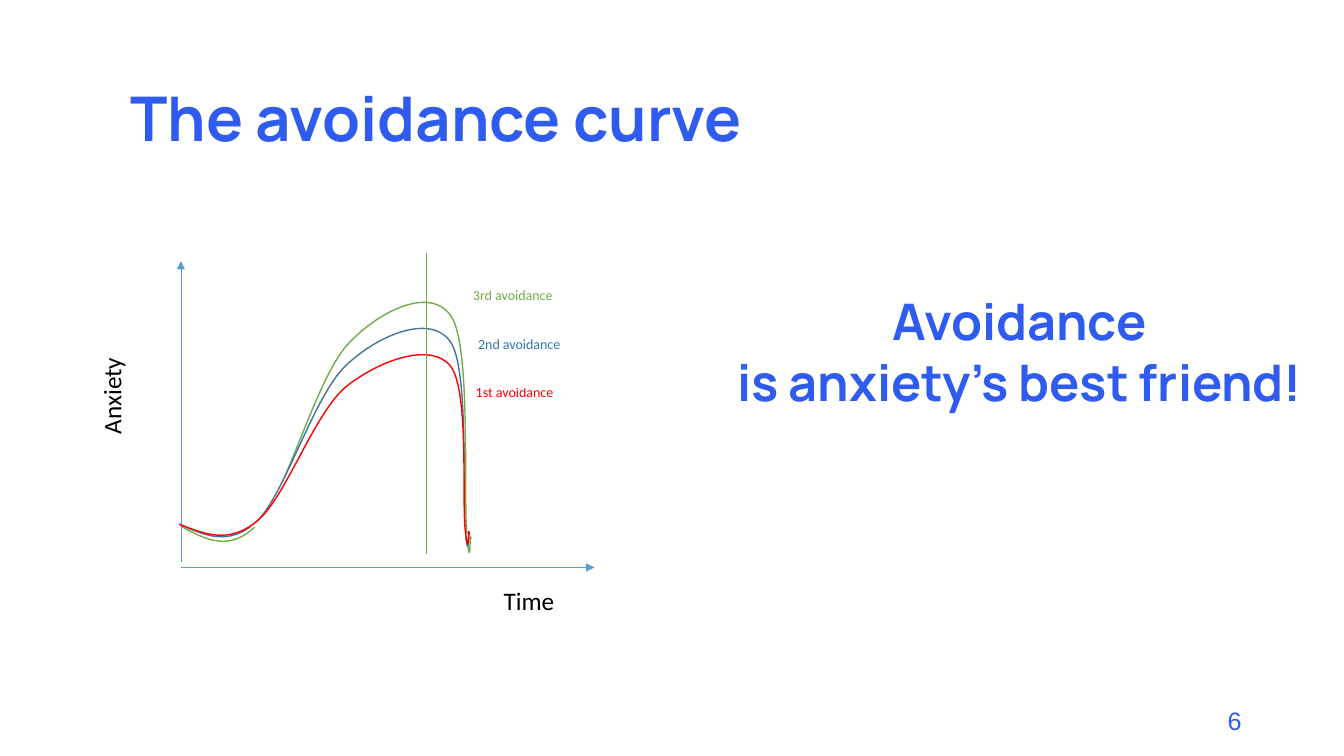
from pptx import Presentation
from pptx import util as u
from pptx.dml.color import RGBColor
from pptx.enum import shapes, text
from pptx.oxml.ns import qn
from lxml import etree

ACCENT, GREEN, BLUE, RED = "2F5CEE", "70AD47", "43739E", "FF0000"
AXIS, WHITE, BLACK = "5B9BD5", "FFFFFF", "000000"

# Bezier points in cm: a start, then three points for each segment
XS = [4.52, 5.16, 5.77, 6.48, 7.19, 7.92, 8.74, 9.55, 10.85, 11.35,
      11.84, 11.63, 11.73, 11.81, 11.81, 11.81, 11.84, 11.84, 11.81]
THIRD = [13.26, 13.61, 13.94, 13.18, 12.42, 9.53, 8.66, 7.8, 7.19, 8.0,
         8.81, 12.6, 13.51, 14.45, 13.51, 13.51, 13.54, 13.56, 13.61]
SECOND = [13.21, 13.49, 13.79, 13.13, 12.45, 9.93, 9.19, 8.43, 7.9, 8.61,
          9.32, 12.62, 13.41, 14.22, 13.41, 13.41, 13.44, 13.46, 13.49]
FIRST = [13.21, 13.46, 13.72, 13.13, 12.57, 10.39, 9.73, 9.09, 8.61, 9.22,
         9.83, 12.7, 13.39, 14.1, 13.39, 13.39, 13.41, 13.44, 13.46]


def rgb(code):
    return RGBColor.from_string(code)


def style(frame, size, font, color, align, bold=False):
    frame.word_wrap = True
    for para in frame.paragraphs:
        para.alignment = align
        for run in para.runs:
            run.font.size = u.Pt(size)
            run.font.name = font
            run.font.bold = bold
            run.font.color.rgb = rgb(color)


def place(shape, box):
    shape.left, shape.top, shape.width, shape.height = map(u.Cm, box)


def label(slide, words, box, size, color, font="Calibri",
          align=text.PP_ALIGN.LEFT, bold=False, fill=None, turn=0):
    shape = slide.shapes.add_textbox(*map(u.Cm, box))
    shape.rotation = turn
    if fill:
        shape.fill.solid()
        shape.fill.fore_color.rgb = rgb(fill)
    shape.text_frame.text = words
    style(shape.text_frame, size, font, color, align, bold)


def line(slide, start, end, color, arrow=False):
    link = slide.shapes.add_connector(
        shapes.MSO_CONNECTOR.STRAIGHT, *map(u.Cm, start + end))
    link.line.color.rgb = rgb(color)
    link.line.width = u.Pt(0.5)
    if arrow:
        etree.SubElement(link.line._get_or_add_ln(), qn("a:tailEnd"),
                         type="triangle")
    etree.SubElement(link._element.spPr, qn("a:effectLst"))


def curve(slide, ys, color, top, high, shift=0):
    left, wide = XS[0] + shift, 7.32
    dots = [(u.Cm(x + shift - left), u.Cm(y - top)) for x, y in zip(XS, ys)]
    pen = slide.shapes.build_freeform(*dots[0])
    pen.add_line_segments(dots[1:], close=False)
    shape = pen.convert_to_shape()
    place(shape, (left, top, wide, high))

    # Turn the straight segments into Bezier segments
    track = next(shape._element.iter(qn("a:path")))
    track.set("w", str(u.Cm(wide)))
    track.set("h", str(u.Cm(high)))
    for part in list(track):
        track.remove(part)
    groups = [("a:moveTo", dots[:1])]
    groups += [("a:cubicBezTo", dots[i:i + 3])
               for i in range(1, len(dots), 3)]
    for tag, group in groups:
        part = etree.SubElement(track, qn(tag))
        for x, y in group:
            etree.SubElement(part, qn("a:pt"), x=str(int(x)), y=str(int(y)))

    shape.shadow.inherit = False
    shape.fill.solid()
    shape.fill.fore_color.rgb = rgb(WHITE)
    shape.line.color.rgb = rgb(color)
    shape.line.width = u.Pt(1)


def head(slide, words):
    title = slide.shapes.title
    place(title, (3.03, 1.22, 29.21, 3.68))
    frame = title.text_frame
    frame.text = words
    frame.auto_size = text.MSO_AUTO_SIZE.NONE
    frame.vertical_anchor = text.MSO_ANCHOR.MIDDLE
    frame.paragraphs[0].line_spacing = 0.9
    style(frame, 44, "Manrope", ACCENT, text.PP_ALIGN.LEFT, True)


def graph(slide):
    # Highest curve and axes
    curve(slide, THIRD, GREEN, 7.62, 6.3, shift=0.04)
    line(slide, (4.56, 14.3), (14.98, 14.3), AXIS, arrow=True)
    line(slide, (4.56, 14.17), (4.56, 6.58), AXIS, arrow=True)

    # Axis names, lower curves and their labels
    label(slide, "1st avoidance", (11.74, 9.55, 6.45, 1.45), 10, RED,
          fill=WHITE)
    label(slide, "Anxiety", (-0.23, 6.63, 7.09, 2.03), 18, BLACK,
          fill=WHITE, turn=270)
    label(slide, "Time", (12.44, 14.63, 7.24, 1.83), 18, BLACK, fill=WHITE)
    curve(slide, SECOND, BLUE, 8.28, 5.49)
    curve(slide, FIRST, RED, 8.94, 4.75)
    label(slide, "2nd avoidance", (11.8, 8.33, 6.45, 1.45), 10, "2E75B6",
          fill=WHITE)
    label(slide, "3rd avoidance", (11.67, 7.09, 6.45, 1.22), 10, GREEN,
          fill=WHITE)

    # Moment of avoidance
    line(slide, (10.74, 6.38), (10.74, 13.97), GREEN)


def main():
    deck = Presentation()
    deck.slide_width, deck.slide_height = u.Cm(33.87), u.Cm(19.05)
    slide = deck.slides.add_slide(deck.slide_layouts[5])
    head(slide, "The avoidance curve")
    graph(slide)

    # Message and page number
    label(slide, "Avoidance\nis anxiety’s best friend!",
          (18.03, 7.19, 15.34, 4.88), 36, ACCENT, "Manrope",
          text.PP_ALIGN.CENTER, bold=True)
    label(slide, "6", (23.92, 17.65, 7.62, 1.02), 18, ACCENT, "Arial",
          text.PP_ALIGN.RIGHT)
    deck.save("out.pptx")


if __name__ == "__main__":
    main()
